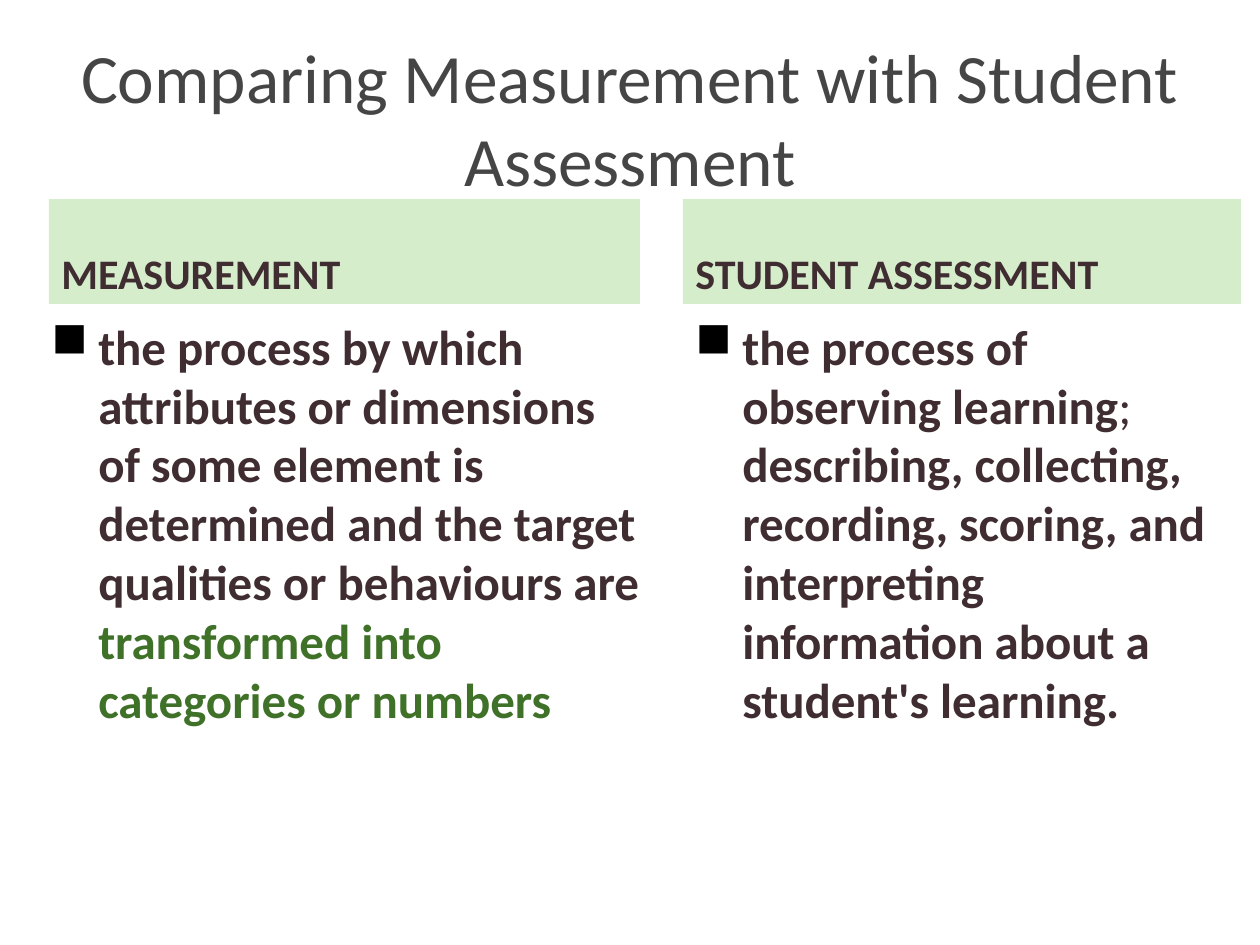
from typing import NamedTuple

from lxml.etree import SubElement as Sub
from pptx import Presentation
from pptx.dml.color import RGBColor as Rgb
from pptx.enum.shapes import MSO_SHAPE as Kind
from pptx.enum.text import MSO_ANCHOR as Anchor, PP_ALIGN as Align
from pptx.oxml.ns import qn
from pptx.util import Emu, Pt

SCALE = 914400 / 126
FONT = "Calibri"
GREY, DARK, GREEN, PALE, BLACK = "454545", "3F2D32", "3F7228", "D5EDCA", "000000"


class Box(NamedTuple):
    left: int
    top: int
    width: int
    height: int


class Span(NamedTuple):
    text: str
    color: str = DARK
    bold: bool = True


class Column(NamedTuple):
    title: str
    head: Box
    body: Box
    spans: list[Span]


def px(size: int) -> Emu:
    return Emu(round(size * SCALE))


def paint(target, color: str) -> None:
    target.rgb = Rgb.from_string(color)


def style(run, size: float, span: Span) -> None:
    font = run.font
    font.name, font.size, font.bold = FONT, Pt(size), span.bold
    paint(font.color, span.color)


def add_text(slide, box: Box, size: float, spans: list[Span],
             anchor=Anchor.TOP, align=Align.LEFT, fill: str = ""):
    area = [px(side) for side in box]
    if fill:
        shape = slide.shapes.add_shape(Kind.RECTANGLE, *area)
        shape.shadow.inherit = False
        shape.fill.solid()
        paint(shape.fill.fore_color, fill)
        shape.line.fill.background()
    else:
        shape = slide.shapes.add_textbox(*area)
    frame = shape.text_frame
    frame.word_wrap = True
    frame.vertical_anchor = anchor
    para = frame.paragraphs[0]
    para.alignment = align
    for span in spans:
        run = para.add_run()
        run.text = span.text
        style(run, size, span)
    return para


def add_bullet(para, color: str, indent: int) -> None:
    props = para._p.get_or_add_pPr()
    props.set("marL", str(px(indent)))
    props.set("indent", str(-px(indent)))
    Sub(Sub(props, qn("a:buClr")), qn("a:srgbClr"), val=color)
    Sub(props, qn("a:buChar"), char="■")


def add_column(slide, col: Column) -> None:
    add_text(slide, col.head, 24, [Span(col.title)], Anchor.BOTTOM, fill=PALE)
    para = add_text(slide, col.body, 28, col.spans)
    add_bullet(para, BLACK, 47)


COLUMNS = [
    Column("MEASUREMENT", Box(49, 199, 591, 105), Box(39, 310, 620, 576), [
        Span("the process by which attributes or dimensions of some element is "
             "determined and the target qualities or behaviours are "),
        Span("transformed into categories or numbers", GREEN),
    ]),
    Column("STUDENT ASSESSMENT", Box(683, 199, 558, 105), Box(683, 310, 548, 536), [
        Span("the process of observing learning"),
        Span("; ", bold=False),
        Span("describing, collecting, recording, scoring, and interpreting "
             "information about a student's learning."),
    ]),
]


def main() -> None:
    deck = Presentation()
    deck.slide_width, deck.slide_height = px(1260), px(945)
    slide = deck.slides.add_slide(deck.slide_layouts[6])
    title = Span("Comparing Measurement with Student Assessment", GREY, False)
    add_text(slide, Box(63, 38, 1134, 158), 39.6, [title], Anchor.MIDDLE, Align.CENTER)
    for col in COLUMNS:
        add_column(slide, col)
    deck.save("out.pptx")


if __name__ == "__main__":
    main()
